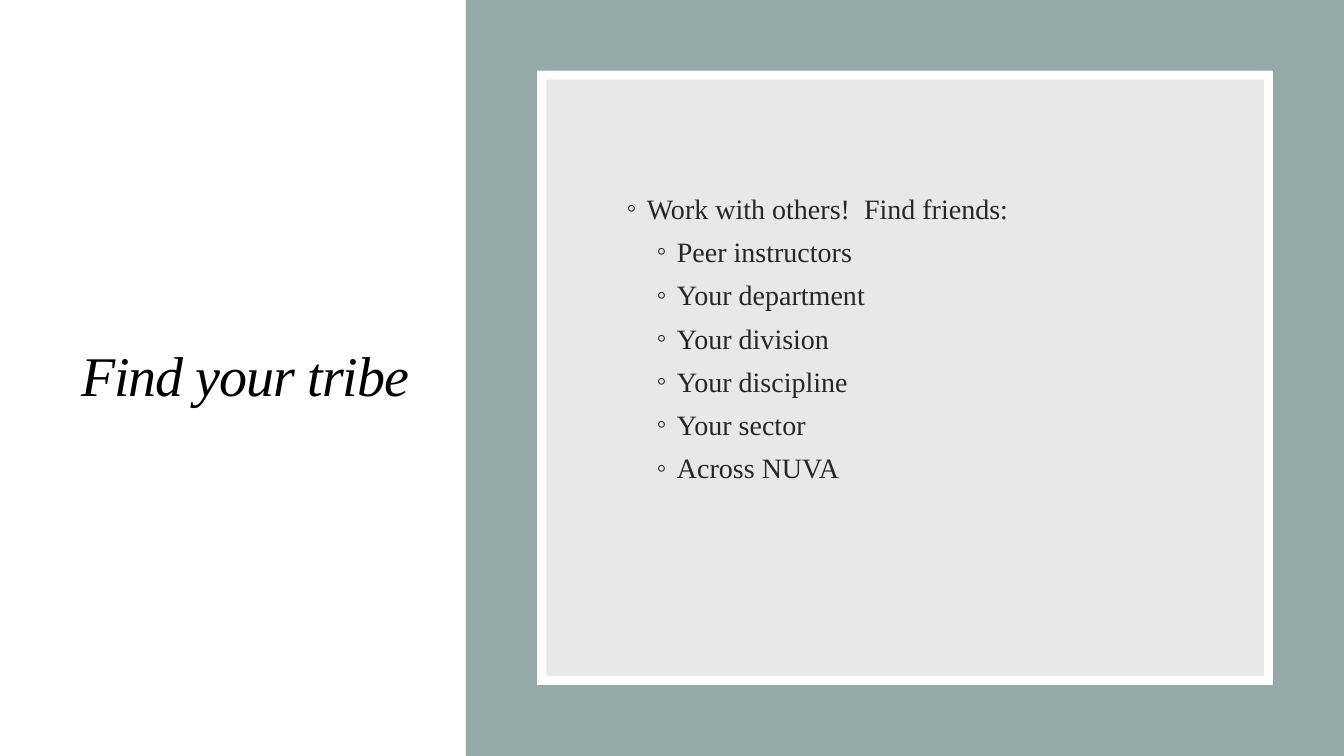
from lxml.etree import SubElement
from pptx import Presentation
from pptx.dml.color import RGBColor
from pptx.enum.shapes import MSO_SHAPE
from pptx.enum.text import MSO_ANCHOR, PP_ALIGN
from pptx.oxml.ns import qn
from pptx.util import Cm, Pt

TITLE = "Find your tribe"
LEAD = "Work with others!  Find friends:"
FRIENDS = ["Peer instructors", "Your department", "Your division",
           "Your discipline", "Your sector", "Across NUVA"]

THEME = {
    "font": "Times New Roman",
    "white": "FFFFFF", "sage": "96A9A9", "card": "D9D9D9",
    "title": "000000", "body": "262626",
    "title_size": 40, "body_size": 20,
}
CARD_OPACITY = 60  # percent

# Centimetres: left, top, width, height
SLIDE = (0, 0, 33.87, 19.05)
PANEL_LEFT = 11.74
FRAME = (13.54, 1.78, 18.54, 15.48)
FRAME_BORDER = 0.23
TITLE_BOX = (1.8, 3.25, 9.1, 12.55)
LIST_BOX = (15.54, 3.78, 14.5, 9.41)

BULLET_HANG = 0.51
LEAD_INDENT = 0.51
FRIEND_INDENT = 1.27


def add_block(slide, box, colour, opacity=100):
    shape = slide.shapes.add_shape(MSO_SHAPE.RECTANGLE, *map(Cm, box))
    shape.shadow.inherit = False
    shape.line.fill.background()
    shape.fill.solid()
    shape.fill.fore_color.rgb = RGBColor.from_string(colour)
    if opacity < 100:
        colour_element = shape.fill._xPr.find(qn("a:solidFill"))[0]
        SubElement(colour_element, qn("a:alpha"), val=str(opacity * 1000))


def add_text_frame(slide, box):
    frame = slide.shapes.add_textbox(*map(Cm, box)).text_frame
    frame.word_wrap = True
    frame.vertical_anchor = MSO_ANCHOR.MIDDLE
    return frame


def write(paragraph, text, *, size, colour, italic=False, line_spacing=1.0,
          space_before=0, tracking=0):
    """Fill a paragraph; tracking is letter spacing in points."""
    paragraph.alignment = PP_ALIGN.LEFT
    paragraph.line_spacing = line_spacing
    paragraph.space_before = Pt(space_before)
    run = paragraph.add_run()
    run.text = text
    run.font.name = THEME["font"]
    run.font.size = Pt(size)
    run.font.italic = italic
    run.font.color.rgb = RGBColor.from_string(colour)
    if tracking:
        run.font._element.set("spc", str(round(tracking * 100)))


def add_bullet(paragraph, indent):
    properties = paragraph._p.get_or_add_pPr()
    properties.set("marL", str(Cm(indent)))
    properties.set("indent", str(-Cm(BULLET_HANG)))
    colour = SubElement(properties, qn("a:buClr"))
    SubElement(colour, qn("a:srgbClr"), val=THEME["body"])
    SubElement(properties, qn("a:buFont"), typeface=THEME["font"])
    SubElement(properties, qn("a:buChar"), char="◦")


def add_friend_list(slide):
    frame = add_text_frame(slide, LIST_BOX)
    items = [(LEAD, 0, LEAD_INDENT, 9)]
    items += [(friend, 1, FRIEND_INDENT, 5) for friend in FRIENDS]
    for index, (text, level, indent, space_before) in enumerate(items):
        paragraph = frame.add_paragraph() if index else frame.paragraphs[0]
        paragraph.level = level
        write(paragraph, text, size=THEME["body_size"], colour=THEME["body"],
              line_spacing=1.08, space_before=space_before)
        add_bullet(paragraph, indent)


def main():
    presentation = Presentation()
    presentation.slide_width = Cm(SLIDE[2])
    presentation.slide_height = Cm(SLIDE[3])
    slide = presentation.slides.add_slide(presentation.slide_layouts[6])

    panel = (PANEL_LEFT, 0, SLIDE[2] - PANEL_LEFT, SLIDE[3])
    left, top, width, height = FRAME
    card = (left + FRAME_BORDER, top + FRAME_BORDER,
            width - 2 * FRAME_BORDER, height - 2 * FRAME_BORDER)
    add_block(slide, SLIDE, THEME["white"])
    add_block(slide, panel, THEME["sage"])
    add_block(slide, FRAME, THEME["white"])
    add_block(slide, card, THEME["card"], CARD_OPACITY)

    add_friend_list(slide)
    title = add_text_frame(slide, TITLE_BOX)
    write(title.paragraphs[0], TITLE, size=THEME["title_size"],
          colour=THEME["title"], italic=True, line_spacing=0.9, tracking=-0.7)
    presentation.save("out.pptx")


if __name__ == "__main__":
    main()
